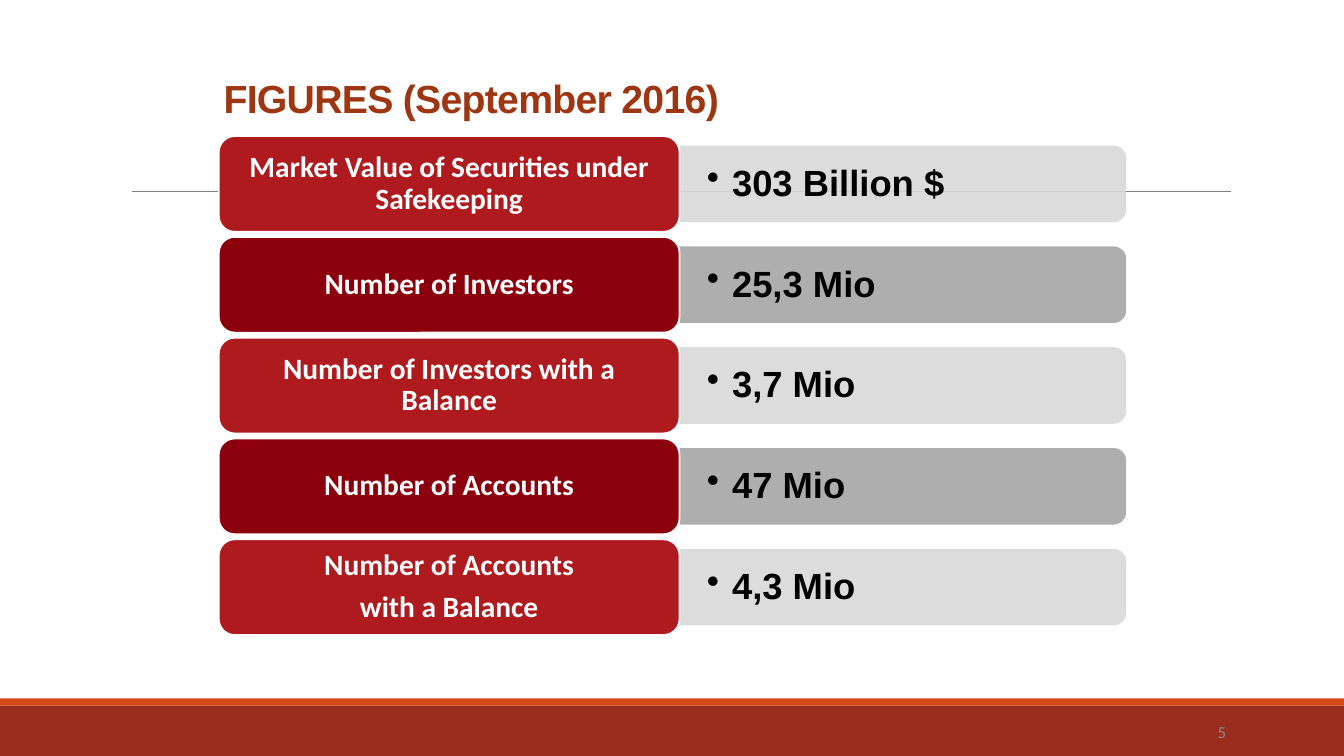
from lxml.etree import SubElement
from pptx import Presentation
from pptx.dml.color import RGBColor
from pptx.enum.shapes import MSO_CONNECTOR, MSO_SHAPE
from pptx.enum.text import MSO_ANCHOR, PP_ALIGN
from pptx.oxml.ns import qn
from pptx.util import Inches, Pt

FIGURES = [
    (["Market Value of Securities under Safekeeping"], "303 Billion $"),
    (["Number of Investors"], "25,3 Mio"),
    (["Number of Investors with a Balance"], "3,7 Mio"),
    (["Number of Accounts"], "47 Mio"),
    (["Number of Accounts", "with a Balance"], "4,3 Mio"),
]
ROW_COLOURS = [("AE1A1E", "D9D9D9"), ("8C000D", "A6A6A6")]
ROW_PITCH, ROW_HEIGHT = 1.0, 0.95
LABEL_WIDTH, BAR_HEIGHT = 4.57, 0.76

TITLE = {"size": 28, "font": "Arial", "colour": "9E3611", "bold": True}
LABEL = {"size": 21, "font": "Calibri", "colour": "FFFFFF", "bold": True}
VALUE = {"size": 26, "font": "Arial", "colour": "000000", "bold": True}
NUMBER = {"size": 12, "font": "Calibri", "colour": "898989", "bold": False}


def rgb(hex_colour):
    return RGBColor.from_string(hex_colour)


def add_block(slide, kind, box, colour):
    block = slide.shapes.add_shape(kind, *map(Inches, box))
    block.shadow.inherit = False
    block.fill.solid()
    block.fill.fore_color.rgb = rgb(colour)
    block.line.fill.background()
    return block


def add_text_box(slide, box):
    return slide.shapes.add_textbox(*map(Inches, box)).text_frame


def write(frame, lines, style, paragraph_format, insets=(0.1, 0.05),
          anchor=MSO_ANCHOR.MIDDLE):
    across, down = map(Inches, insets)
    frame_format = {
        "word_wrap": True, "vertical_anchor": anchor,
        "margin_left": across, "margin_right": across,
        "margin_top": down, "margin_bottom": down,
    }
    for name, setting in frame_format.items():
        setattr(frame, name, setting)
    for index, line in enumerate(lines):
        paragraph = frame.add_paragraph() if index else frame.paragraphs[0]
        for name, setting in paragraph_format.items():
            setattr(paragraph, name, setting)
        run = paragraph.add_run()
        run.text = line
        run.font.size = Pt(style["size"])
        run.font.name = style["font"]
        run.font.bold = style["bold"]
        run.font.color.rgb = rgb(style["colour"])


def add_background(slide, width, height):
    # Footer bands
    add_block(slide, MSO_SHAPE.RECTANGLE, (0, height - 0.5, width, 0.5), "9B2D1F")
    add_block(slide, MSO_SHAPE.RECTANGLE, (0, height - 0.57, width, 0.07), "D34817")
    # Thin rule behind the first row
    rule = slide.shapes.add_connector(
        MSO_CONNECTOR.STRAIGHT, *map(Inches, (1.31, 1.9, 12.21, 1.9)))
    rule.line.color.rgb = rgb("808080")
    rule.line.width = Pt(0.5)
    SubElement(rule._element.spPr, qn("a:effectLst"))


def add_title(slide, box, title):
    frame = add_text_box(slide, box)
    write(frame, [title], TITLE, {"line_spacing": 0.85}, anchor=MSO_ANCHOR.BOTTOM)
    frame.paragraphs[0].runs[0].font._element.set("spc", "-50")


def add_value_bar(slide, box, value, colour):
    left, top, width, height = box
    # Turned a quarter so that the rounded corners face right
    upright = (left + (width - height) / 2, top - (width - height) / 2, height, width)
    bar = add_block(slide, MSO_SHAPE.ROUND_2_SAME_RECTANGLE, upright, colour)
    bar.rotation = 90
    fill_colour = bar._element.spPr.find(qn("a:solidFill"))[0]
    SubElement(fill_colour, qn("a:alpha"), val="90000")

    # Bulleted value
    frame = add_text_box(slide, (left, top + 0.04, width - 0.04, height - 0.07))
    write(frame, [value], VALUE, {"line_spacing": 0.9}, (0.27, 0.14))
    properties = frame.paragraphs[0]._p.get_or_add_pPr()
    properties.set("marL", str(Inches(0.25)))
    properties.set("indent", str(Inches(-0.25)))
    SubElement(properties, qn("a:buChar"), char="•")


def add_figure_row(slide, box, label, value, colours):
    left, top, width, height = box
    label_colour, bar_colour = colours
    bar_box = (left + LABEL_WIDTH, top + (height - BAR_HEIGHT) / 2,
               width - LABEL_WIDTH, BAR_HEIGHT)
    add_value_bar(slide, bar_box, value, bar_colour)

    # Label with a white outline
    plate = add_block(slide, MSO_SHAPE.ROUNDED_RECTANGLE,
                      (left, top, LABEL_WIDTH, height), label_colour)
    plate.line.color.rgb = rgb("FFFFFF")
    plate.line.width = Pt(1.25)
    centred = {"alignment": PP_ALIGN.CENTER, "line_spacing": 0.9,
               "space_after": Pt(7)}
    write(plate.text_frame, label, LABEL, centred, (0.09, 0.04))


def add_figures(slide, left, top, width):
    for index, (label, value) in enumerate(FIGURES):
        row_box = (left, top + index * ROW_PITCH, width, ROW_HEIGHT)
        add_figure_row(slide, row_box, label, value, ROW_COLOURS[index % 2])


def add_slide_number(slide, box, number):
    write(add_text_box(slide, box), [number], NUMBER, {"alignment": PP_ALIGN.RIGHT})


def main():
    deck = Presentation()
    deck.slide_width, deck.slide_height = Inches(13.33), Inches(7.5)
    slide = deck.slides.add_slide(deck.slide_layouts[6])
    add_background(slide, 13.33, 7.5)
    add_figures(slide, 2.17, 1.35, 9)
    add_slide_number(slide, (10.83, 7.06, 1.43, 0.4), "5")
    add_title(slide, (2.12, 0, 9, 1.25), "FIGURES (September 2016)")
    deck.save("out.pptx")


if __name__ == "__main__":
    main()
